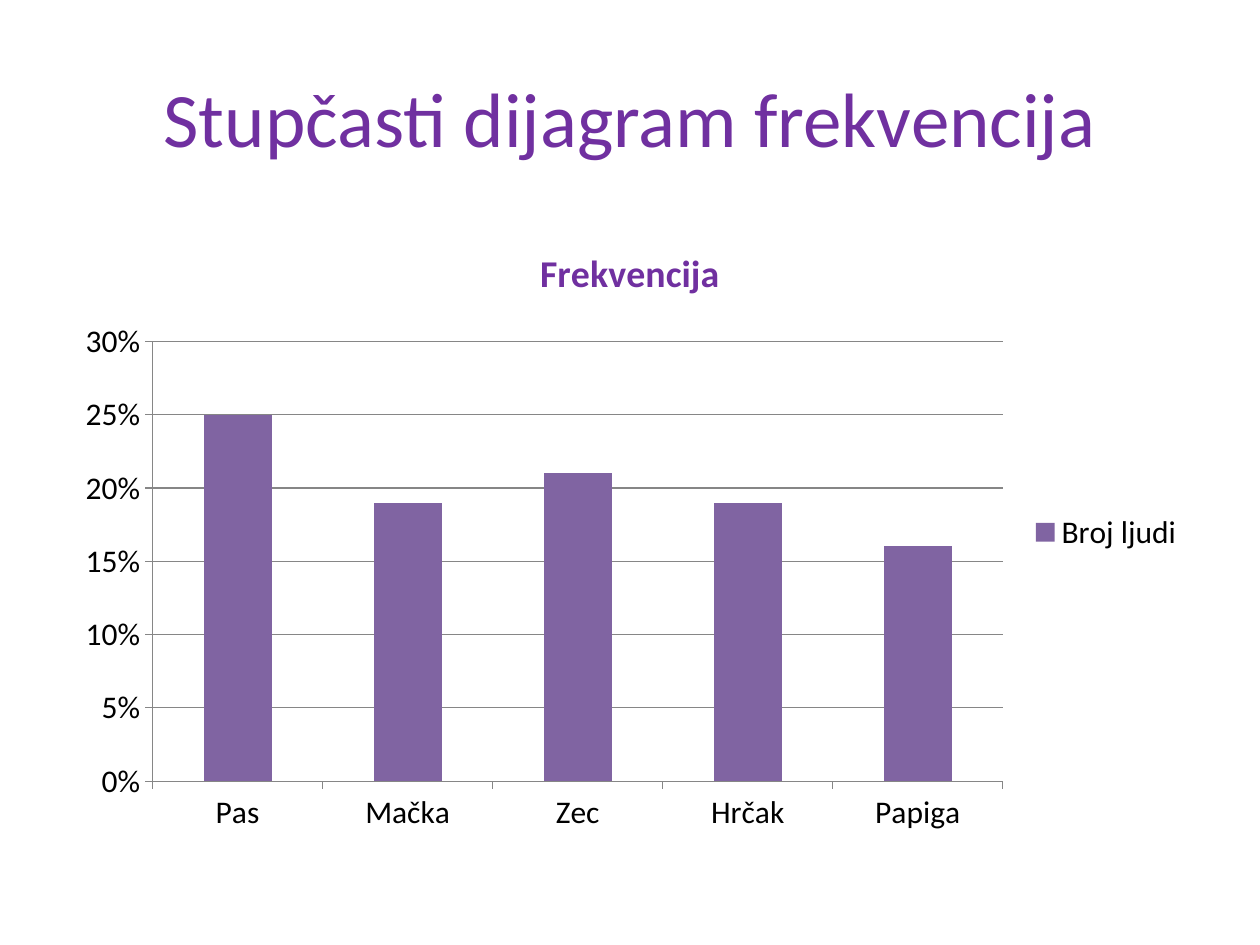
from pptx import Presentation
from pptx.chart.data import CategoryChartData
from pptx.dml.color import RGBColor
from pptx.enum.chart import XL_CHART_TYPE, XL_LEGEND_POSITION, XL_TICK_MARK
from pptx.enum.text import MSO_ANCHOR, PP_ALIGN
from pptx.util import Inches, Pt

PURPLE = RGBColor(0x70, 0x30, 0xA0)
VIOLET = RGBColor(0x80, 0x64, 0xA2)
BLACK = RGBColor(0, 0, 0)
GRAY = RGBColor(0x86, 0x86, 0x86)
FACE = "Calibri"
PETS = {"Pas": 0.25, "Mačka": 0.19, "Zec": 0.21, "Hrčak": 0.19, "Papiga": 0.16}


def apply(item, **values):
    for name, value in values.items():
        setattr(item, name, value)


def style(font, size, color, bold=False):
    apply(font, name=FACE, size=Pt(size), bold=bold)
    font.color.rgb = color


def rule(line):
    line.color.rgb = GRAY
    line.width = Pt(0.75)


def add_title(slide, text):
    box = slide.shapes.add_textbox(Inches(0.5), Inches(0.3), Inches(9), Inches(1.25))
    frame = box.text_frame
    apply(frame, word_wrap=True, vertical_anchor=MSO_ANCHOR.MIDDLE)
    para = frame.paragraphs[0]
    apply(para, text=text, alignment=PP_ALIGN.CENTER)
    style(para.runs[0].font, 44, PURPLE)


def set_axes(chart):
    for axis in (chart.category_axis, chart.value_axis):
        apply(axis, major_tick_mark=XL_TICK_MARK.OUTSIDE,
              minor_tick_mark=XL_TICK_MARK.NONE)
        rule(axis.format.line)
    axis = chart.value_axis
    apply(axis, minimum_scale=0, maximum_scale=0.3, major_unit=0.05,
          has_major_gridlines=True)
    apply(axis.tick_labels, number_format="0%", number_format_is_linked=False)
    rule(axis.major_gridlines.format.line)


def add_bars(slide, title, label, values):
    data = CategoryChartData(number_format="0%")
    data.categories = list(values)
    data.add_series(label, list(values.values()))
    chart = slide.shapes.add_chart(
        XL_CHART_TYPE.COLUMN_CLUSTERED,
        Inches(0.5), Inches(1.75), Inches(9), Inches(4.95), data).chart
    style(chart.font, 18, BLACK)
    apply(chart, has_title=True, has_legend=True)
    frame = chart.chart_title.text_frame
    frame.text = title
    style(frame.paragraphs[0].runs[0].font, 21.6, PURPLE, True)
    chart.chart_title.include_in_layout = False
    apply(chart.legend, position=XL_LEGEND_POSITION.RIGHT, include_in_layout=False)
    set_axes(chart)
    plot = chart.plots[0]
    apply(plot, gap_width=150, vary_by_categories=False)
    fill = plot.series[0].format.fill
    fill.solid()
    fill.fore_color.rgb = VIOLET


def main():
    deck = Presentation()
    apply(deck, slide_width=Inches(10), slide_height=Inches(7.5))
    slide = deck.slides.add_slide(deck.slide_layouts[6])
    add_title(slide, "Stupčasti dijagram frekvencija")
    add_bars(slide, "Frekvencija", "Broj ljudi", PETS)
    deck.save("out.pptx")


if __name__ == "__main__":
    main()
